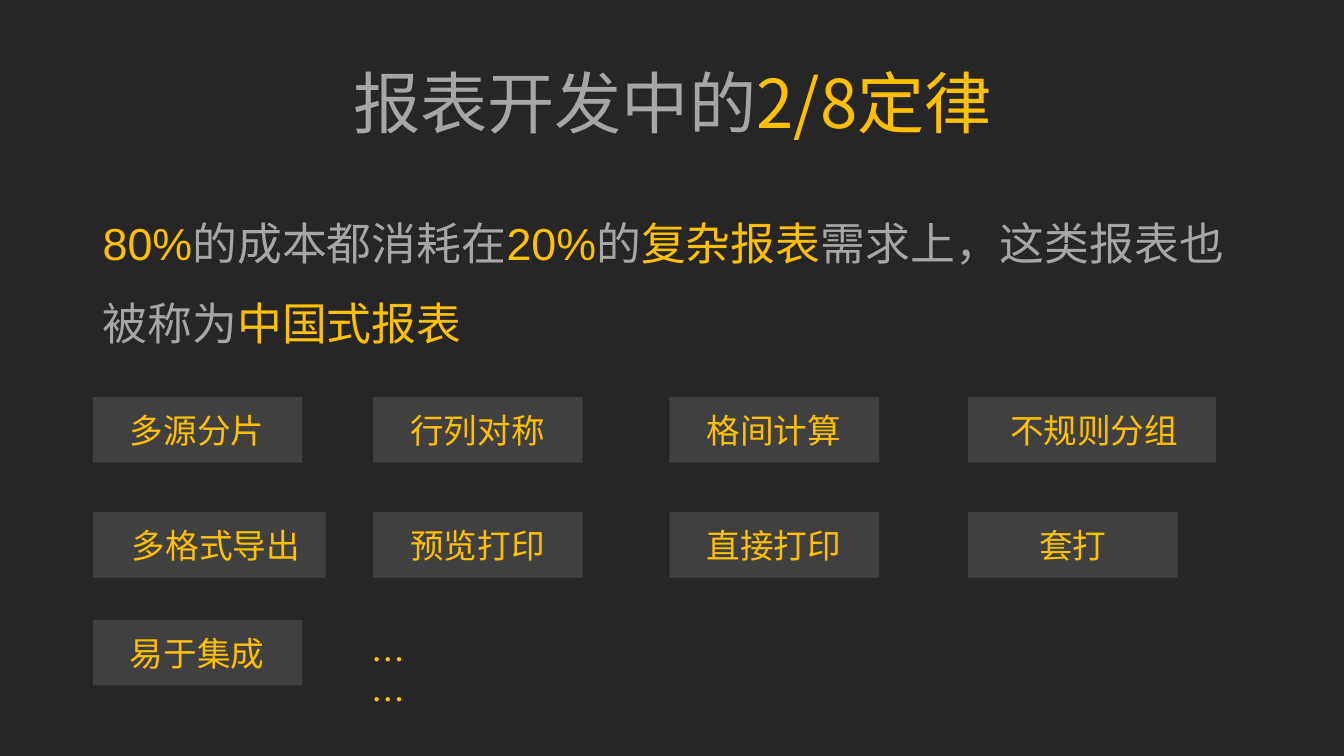
from dataclasses import dataclass

from lxml import etree
from pptx import Presentation
from pptx.dml.color import RGBColor
from pptx.enum import shapes, text
from pptx.oxml import ns
from pptx.util import Inches, Pt


@dataclass(frozen=True)
class Theme:
    background: RGBColor = RGBColor.from_string("262626")
    chip: RGBColor = RGBColor.from_string("404040")
    muted: RGBColor = RGBColor.from_string("A6A6A6")
    accent: RGBColor = RGBColor.from_string("FFC000")
    cjk: str = "Noto Sans CJK SC"
    latin: str = "Arial"
    title: int = 48
    body: int = 32
    label: int = 24


THEME = Theme()
COLUMNS = (0.92, 3.7, 6.64, 9.6)
ROWS = (3.94, 5.08, 6.15)
CHIP_WIDTH, CHIP_HEIGHT = 2.08, 0.65

CHIPS = (
    (0, 0, "多源分片", CHIP_WIDTH, 0.27),
    (0, 1, "行列对称", CHIP_WIDTH, 0.27),
    (0, 2, "格间计算", CHIP_WIDTH, 0.27),
    (0, 3, "不规则分组", 2.46, 0.32),
    (1, 0, "多格式导出", 2.31, 0.29),
    (1, 1, "预览打印", CHIP_WIDTH, 0.27),
    (1, 2, "直接打印", CHIP_WIDTH, 0.27),
    (1, 3, "套打", CHIP_WIDTH, 0.61),
    (2, 0, "易于集成", CHIP_WIDTH, 0.27),
)


def add_text(container, left, top, width, height, parts, size,
             font=THEME.cjk, align=text.PP_ALIGN.LEFT, wrap=True, spacing=None):
    box = container.add_textbox(Inches(left), Inches(top), Inches(width), Inches(height))
    tf = box.text_frame
    tf.word_wrap = wrap
    p = tf.paragraphs[0]
    p.alignment = align
    p.line_spacing = spacing
    p.font.size = Pt(size)
    p.font.name = font
    for content, color in parts:
        r = p.add_run()
        r.text = content
        r.font.color.rgb = color
        etree.SubElement(r.font._element, ns.qn("a:ea"), typeface=THEME.cjk)


def add_chip(s, row, column, label, width, inset):
    left, top = COLUMNS[column], ROWS[row]
    group = s.shapes.add_group_shape()
    sp = group.shapes.add_shape(shapes.MSO_SHAPE.RECTANGLE, Inches(left), Inches(top),
                                Inches(width), Inches(CHIP_HEIGHT))
    sp.shadow.inherit = False
    sp.fill.solid()
    sp.fill.fore_color.rgb = THEME.chip
    sp.line.fill.background()
    add_text(group.shapes, left + inset, top + 0.08, len(label) / 3 + 0.22, 0.5,
             [(label, THEME.accent)], THEME.label, wrap=False)


def main():
    prs = Presentation()
    prs.slide_width, prs.slide_height = Inches(13.33), Inches(7.5)
    s = prs.slides.add_slide(prs.slide_layouts[6])
    s.background.fill.solid()
    s.background.fill.fore_color.rgb = THEME.background

    muted, accent = THEME.muted, THEME.accent
    add_text(s.shapes, 0.92, 0.56, 11.5, 0.91,
             [("报表开发中的", muted), ("2/8定律", accent)],
             THEME.title, align=text.PP_ALIGN.CENTER)
    add_text(s.shapes, 0.92, 1.82, 11.5, 1.62,
             [("80%", accent), ("的成本都消耗在", muted), ("20%", accent),
              ("的", muted), ("复杂报表", accent),
              ("需求上，这类报表也被称为", muted), ("中国式报表", accent)],
             THEME.body, font=THEME.latin, spacing=1.5)
    for chip in CHIPS:
        add_chip(s, *chip)
    add_text(s.shapes, 3.59, 6.29, 0.75, 0.5, [("……", accent)], THEME.label)

    prs.save("out.pptx")


if __name__ == "__main__":
    main()
